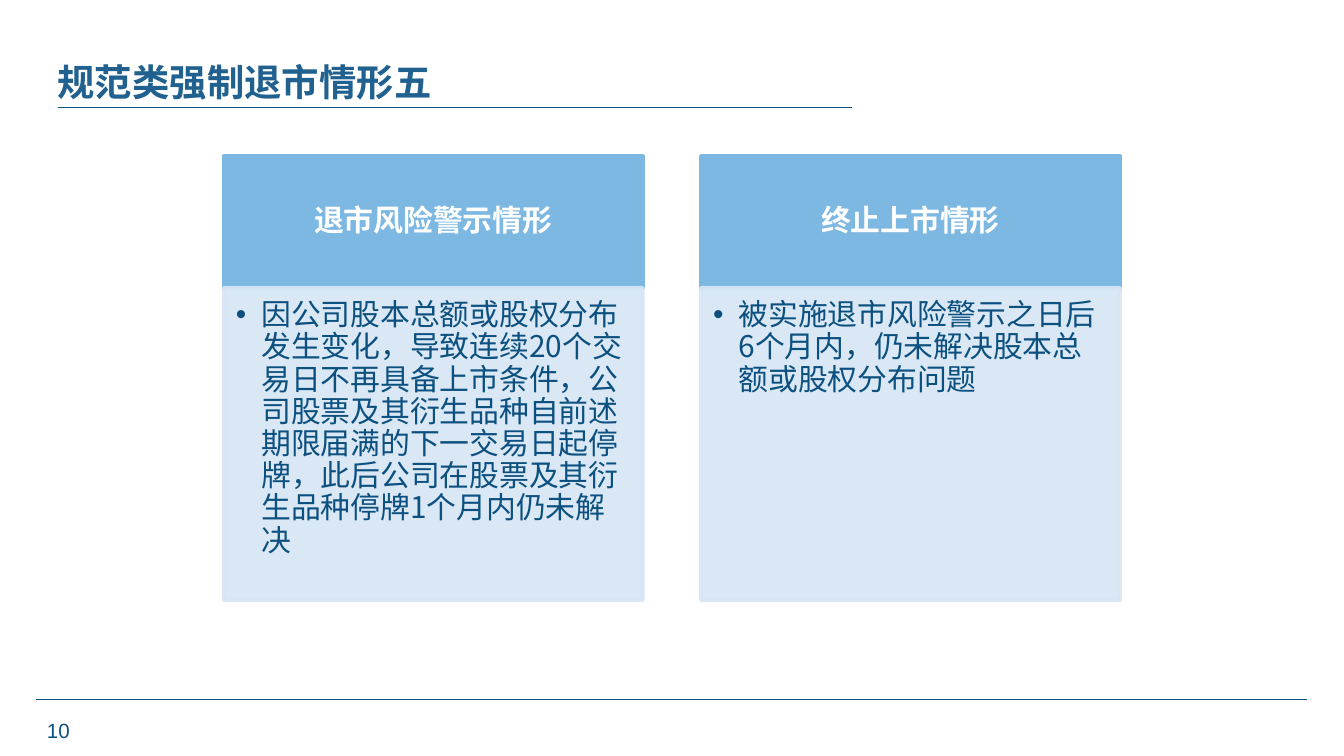
"""Build a slide with two cards on delisting for share-capital reasons."""
from dataclasses import dataclass

from lxml import etree
from pptx import Presentation
from pptx.dml.color import RGBColor
from pptx.enum.shapes import MSO_CONNECTOR, MSO_SHAPE
from pptx.enum.text import MSO_ANCHOR, PP_ALIGN
from pptx.oxml.ns import qn
from pptx.util import Cm, Pt

STRAIGHT = MSO_CONNECTOR.STRAIGHT
RECTANGLE = MSO_SHAPE.RECTANGLE
TOP, MIDDLE = MSO_ANCHOR.TOP, MSO_ANCHOR.MIDDLE
LEFT, CENTER = PP_ALIGN.LEFT, PP_ALIGN.CENTER


@dataclass(frozen=True)
class Theme:
    """Colours, fonts and type sizes of the slide."""
    navy: RGBColor = RGBColor(0x0C, 0x50, 0x7F)
    title: RGBColor = RGBColor(0x20, 0x61, 0x8F)
    header: RGBColor = RGBColor(0x7D, 0xB8, 0xE2)
    body: RGBColor = RGBColor(0xD7, 0xE6, 0xF4)
    white: RGBColor = RGBColor(0xFF, 0xFF, 0xFF)
    cjk_font: str = "Noto Sans CJK SC"
    number_font: str = "Arial"
    title_size: Pt = Pt(20)
    card_size: Pt = Pt(16)
    number_size: Pt = Pt(11)
    body_opacity: int = 90


THEME = Theme()
CARD_LEFT, CARD_TOP, CARD_WIDTH, CARD_PITCH = 4.23, 2.95, 7.92, 9.02
HEADER_HEIGHT, BODY_HEIGHT = 2.49, 5.91
CARDS = [
    ("退市风险警示情形",
     "因公司股本总额或股权分布发生变化，导致连续20个交易日不再具备上市条件，"
     "公司股票及其衍生品种自前述期限届满的下一交易日起停牌，"
     "此后公司在股票及其衍生品种停牌1个月内仍未解决"),
    ("终止上市情形",
     "被实施退市风险警示之日后6个月内，仍未解决股本总额或股权分布问题"),
]


def style_paragraph(paragraph, size, color, font=THEME.cjk_font, bold=False, align=LEFT):
    """Set the alignment and the font of a paragraph."""
    paragraph.alignment = align
    paragraph.font.name = font
    paragraph.font.size = size
    paragraph.font.bold = bold
    paragraph.font.color.rgb = color
    defaults = paragraph._p.pPr.find(qn("a:defRPr"))
    etree.SubElement(defaults, qn("a:ea"), typeface=font)


def add_bullet(paragraph, indent):
    """Give a paragraph a hanging round bullet."""
    properties = paragraph._p.get_or_add_pPr()
    properties.set("marL", str(indent))
    properties.set("indent", str(-indent))
    etree.SubElement(properties, qn("a:buFont"), typeface=THEME.number_font)
    etree.SubElement(properties, qn("a:buChar"), char="•")


def set_opacity(shape, percent):
    """Make the fill and the outline of a shape partly transparent."""
    for color in shape._element.spPr.iter(qn("a:srgbClr")):
        etree.SubElement(color, qn("a:alpha"), val=str(percent * 1000))


def set_insets(frame, left, top, right, bottom):
    """Set the inner margins of a text frame in centimetres."""
    frame.margin_left, frame.margin_top = Cm(left), Cm(top)
    frame.margin_right, frame.margin_bottom = Cm(right), Cm(bottom)


def add_rule(slide, left, right, y):
    """Draw a thin horizontal rule."""
    rule = slide.shapes.add_connector(STRAIGHT, Cm(left), Cm(y), Cm(right), Cm(y))
    rule.line.color.rgb = THEME.navy
    rule.line.width = Pt(0.5)
    etree.SubElement(rule._element.spPr, qn("a:effectLst"))


def add_label(slide, text, left, top, width, height, **style):
    """Add a one-paragraph text box."""
    frame = slide.shapes.add_textbox(Cm(left), Cm(top), Cm(width), Cm(height)).text_frame
    frame.word_wrap = True
    frame.text = text
    style_paragraph(frame.paragraphs[0], **style)


def add_panel(slide, text, left, top, height, color, anchor):
    """Add a filled part of a card and return it with its paragraph."""
    panel = slide.shapes.add_shape(RECTANGLE, Cm(left), Cm(top), Cm(CARD_WIDTH), Cm(height))
    panel.shadow.inherit = False
    panel.fill.solid()
    panel.fill.fore_color.rgb = color
    panel.line.color.rgb = color
    panel.line.width = Pt(2)
    frame = panel.text_frame
    frame.word_wrap = True
    frame.vertical_anchor = anchor
    frame.text = text
    paragraph = frame.paragraphs[0]
    paragraph.line_spacing = 0.9
    return panel, paragraph


def add_card(slide, left, heading, detail):
    """Add a card with a heading panel above a bulleted panel."""
    header, caption = add_panel(slide, heading, left, CARD_TOP, HEADER_HEIGHT,
                                THEME.header, MIDDLE)
    set_insets(header.text_frame, 0.3, 0.18, 0.3, 0.18)
    style_paragraph(caption, THEME.card_size, THEME.white, bold=True, align=CENTER)

    body, condition = add_panel(slide, detail, left, CARD_TOP + HEADER_HEIGHT, BODY_HEIGHT,
                                THEME.body, TOP)
    set_insets(body.text_frame, 0.23, 0.23, 0.3, 0.35)
    set_opacity(body, THEME.body_opacity)
    add_bullet(condition, Cm(0.48))
    style_paragraph(condition, THEME.card_size, THEME.navy)


def main():
    """Build and save the slide."""
    deck = Presentation()
    deck.slide_width, deck.slide_height = Cm(25.4), Cm(14.29)
    slide = deck.slides.add_slide(deck.slide_layouts[6])
    add_rule(slide, 0.69, 24.71, 13.23)
    add_rule(slide, 1.09, 16.1, 2.03)
    add_label(slide, "10", 0.51, 13.44, 1.19, 0.61, size=THEME.number_size,
              color=THEME.navy, font=THEME.number_font, align=CENTER)
    add_label(slide, "规范类强制退市情形五", 0.84, 0.99, 16.2, 1.12,
              size=THEME.title_size, color=THEME.title, bold=True)
    for column, (heading, detail) in enumerate(CARDS):
        add_card(slide, CARD_LEFT + column * CARD_PITCH, heading, detail)
    deck.save("out.pptx")


if __name__ == "__main__":
    main()
